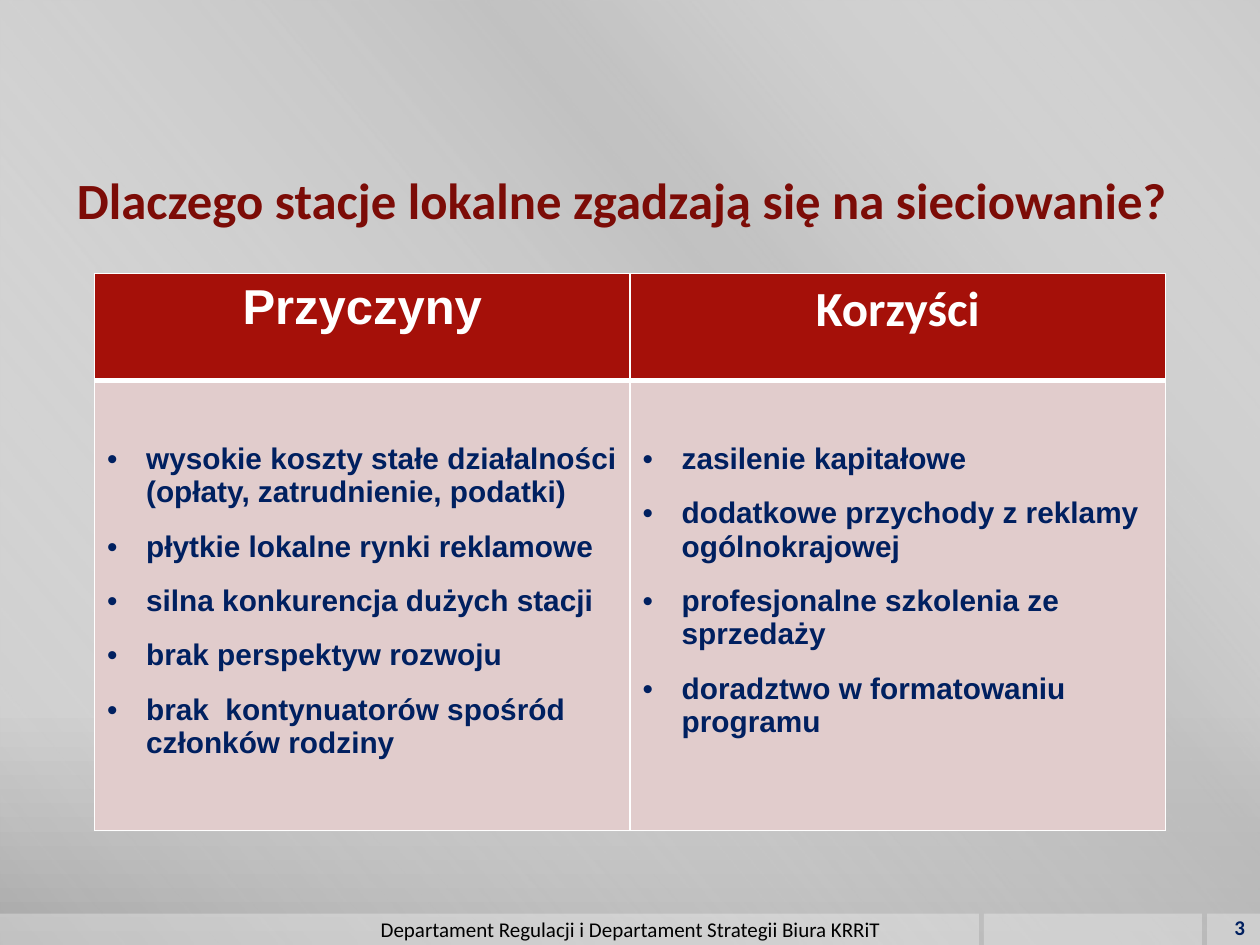
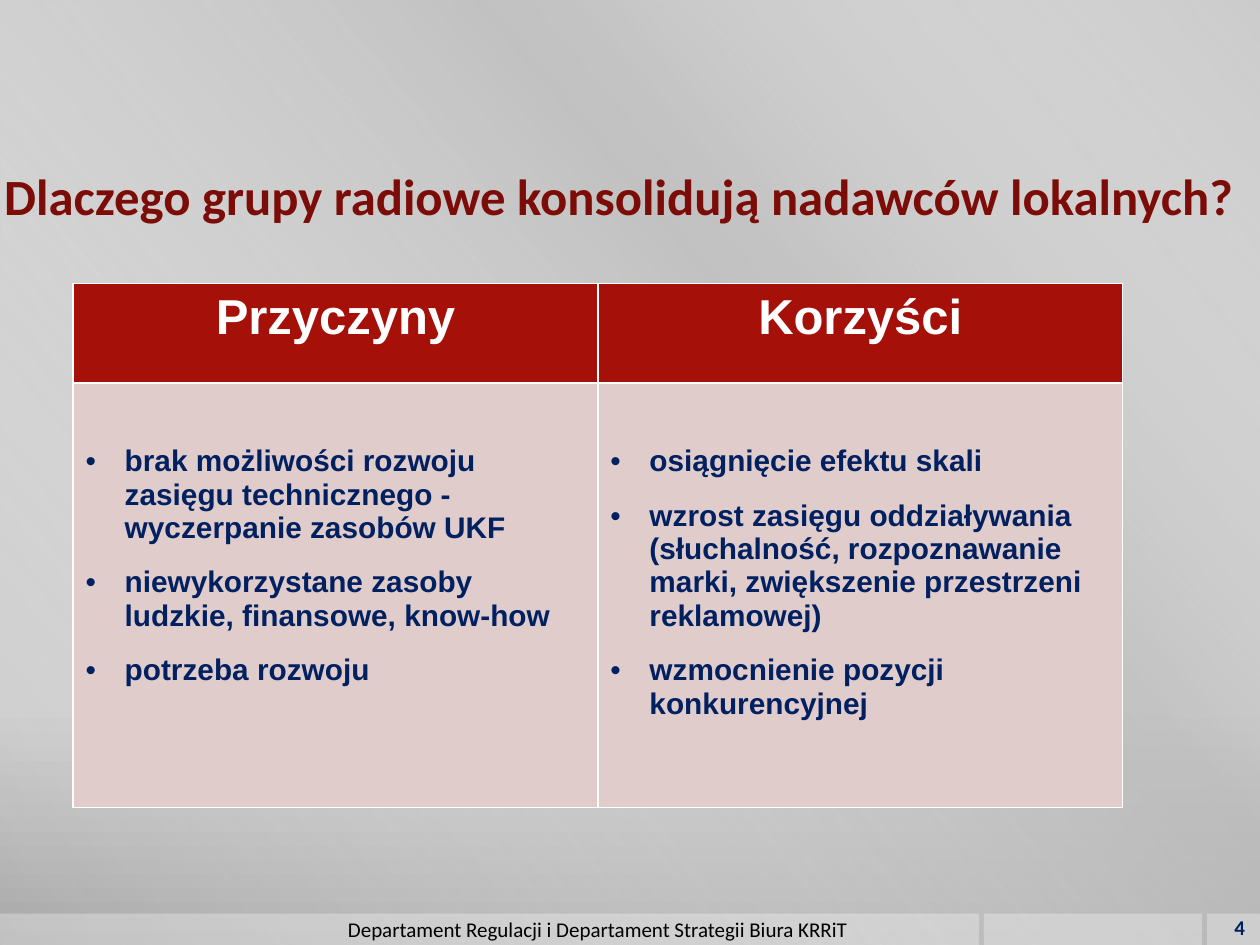
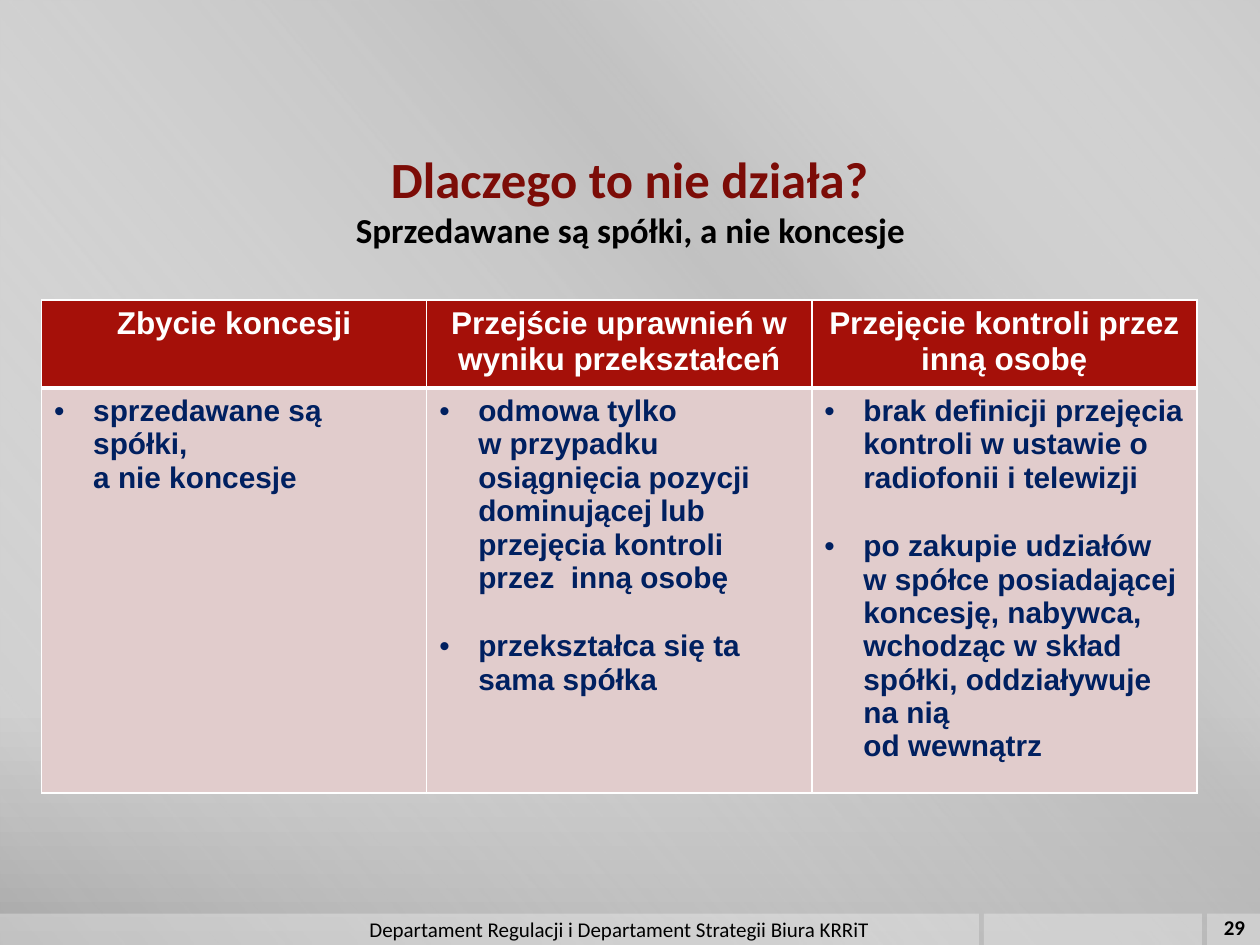
"""Build three slides on why local radio stations join networks."""
from lxml.etree import SubElement
from pptx import Presentation
from pptx.dml.color import RGBColor
from pptx.enum.shapes import MSO_SHAPE
from pptx.enum.text import MSO_ANCHOR, PP_ALIGN
from pptx.oxml.ns import qn
from pptx.util import Inches, Pt

WHITE = RGBColor(0xFF, 0xFF, 0xFF)
BLACK = RGBColor(0x00, 0x00, 0x00)
NAVY = RGBColor(0x00, 0x20, 0x60)
DARK_RED = RGBColor(0x7C, 0x0C, 0x07)
HEADER_RED = RGBColor(0xA5, 0x10, 0x09)
PALE_RED = RGBColor(0xE1, 0xCC, 0xCC)
LIGHT_GREY = RGBColor(0xCB, 0xCB, 0xCB)
MID_GREY = RGBColor(0xC8, 0xC8, 0xC8)
DARK_GREY = RGBColor(0xA7, 0xA7, 0xA7)
SHEEN_GREY = RGBColor(0xBF, 0xBF, 0xBF)

FOOTER = "Departament Regulacji i Departament Strategii Biura KRRiT"
FOOTER_BANDS = [(9.58, 0.42), (7.81, 1.73), (0, 7.77)]
BACKDROP = [(0, LIGHT_GREY, 100), (76, MID_GREY, 100), (100, DARK_GREY, 100)]
SHEEN = [(0, WHITE, 0), (34, SHEEN_GREY, 61), (38, SHEEN_GREY, 76), (100, WHITE, 0)]

SLIDES = [
    {
        "title": "Dlaczego stacje lokalne zgadzają się na sieciowanie?",
        "title_box": (0.44, 1.08, 9, 1),
        "number": "3", "number_color": NAVY, "footer_left": 1.38,
        "table_box": (0.75, 2.17, 8.5), "rows": (0.85, 3.57),
        "header_size": 28, "header_rule": 3, "body_top": 0.49, "gap": 12,
        "columns": [
            ("Przyczyny", "Arial", [
                "wysokie koszty stałe działalności (opłaty, zatrudnienie, podatki)",
                "płytkie lokalne rynki reklamowe",
                "silna konkurencja dużych stacji",
                "brak perspektyw rozwoju",
                "brak  kontynuatorów spośród członków rodziny"]),
            ("Korzyści", "Calibri", [
                "zasilenie kapitałowe",
                "dodatkowe przychody z reklamy ogólnokrajowej",
                "profesjonalne szkolenia ze sprzedaży",
                "doradztwo w formatowaniu programu"]),
        ],
    },
    {
        "title": "Dlaczego grupy radiowe konsolidują nadawców lokalnych?",
        "title_box": (0, 1.05, 9.83, 1),
        "number": "4", "number_color": NAVY, "footer_left": 1.12,
        "table_box": (0.58, 2.25, 8.33), "rows": (0.79, 3.37),
        "header_size": 28, "header_rule": 1, "body_top": 0.49, "gap": 12,
        "columns": [
            ("Przyczyny", "Arial", [
                "brak możliwości rozwoju zasięgu technicznego - wyczerpanie zasobów UKF",
                "niewykorzystane zasoby ludzkie, finansowe, know-how",
                "potrzeba rozwoju"]),
            ("Korzyści", "Arial", [
                "osiągnięcie efektu skali",
                "wzrost zasięgu oddziaływania (słuchalność, rozpoznawanie marki, "
                "zwiększenie przestrzeni reklamowej)",
                "wzmocnienie pozycji konkurencyjnej"]),
        ],
    },
    {
        "title": "Dlaczego to nie działa?",
        "title_box": (0.5, 0.75, 9, 1.33),
        "subtitle": "Sprzedawane są spółki, a nie koncesje",
        "number": "29", "number_color": BLACK, "footer_left": 1.29,
        "table_box": (0.33, 2.38, 9.17), "rows": (0.67, 3.18),
        "header_size": 18, "header_rule": 3, "body_top": 0.05, "gap": 20,
        "columns": [
            ("Zbycie koncesji", "Arial", [
                "sprzedawane są spółki,\na nie koncesje"]),
            ("Przejście uprawnień w wyniku przekształceń", "Arial", [
                "odmowa tylko\nw przypadku osiągnięcia pozycji dominującej "
                "lub przejęcia kontroli przez  inną osobę",
                "przekształca się ta sama spółka"]),
            ("Przejęcie kontroli przez inną osobę", "Arial", [
                "brak definicji przejęcia kontroli w ustawie o radiofonii i telewizji",
                "po zakupie udziałów\nw spółce posiadającej koncesję, nabywca, "
                "wchodząc w skład spółki, oddziaływuje na nią\nod wewnątrz"]),
        ],
    },
]


def paint_gradient(owner, fill, stops, angle):
    """Give the owner's fill these (position, colour, opacity) stops."""
    fill.gradient()
    gradient = owner.element.find(".//" + qn("a:gradFill"))
    gradient.clear()
    stop_list = SubElement(gradient, qn("a:gsLst"))
    for position, color, opacity in stops:
        stop = SubElement(stop_list, qn("a:gs"), pos=str(position * 1000))
        tint = SubElement(stop, qn("a:srgbClr"), val=str(color))
        SubElement(tint, qn("a:alpha"), val=str(opacity * 1000))
    SubElement(gradient, qn("a:lin"), ang=str(angle * 60000), scaled="0")


def add_label(slide, text, box, size, color, bold=True, align=PP_ALIGN.CENTER, inset=0.1):
    """Add one vertically centred line of Calibri text."""
    frame = slide.shapes.add_textbox(*map(Inches, box)).text_frame
    frame.word_wrap = True
    frame.vertical_anchor = MSO_ANCHOR.MIDDLE
    frame.margin_left = frame.margin_right = Inches(inset)
    frame.text = text
    line = frame.paragraphs[0]
    line.alignment = align
    font = line.runs[0].font
    font.name, font.size, font.bold = "Calibri", Pt(size), bold
    font.color.rgb = color


prs = Presentation()
prs.slide_width, prs.slide_height = Inches(10), Inches(7.5)
paint_gradient(prs.slide_master, prs.slide_master.background.fill, BACKDROP, 90)

for content in SLIDES:
    slide = prs.slides.add_slide(prs.slide_layouts[6])

    sheen = slide.shapes.add_shape(
        MSO_SHAPE.RECTANGLE, 0, 0, prs.slide_width, prs.slide_height)
    sheen.shadow.inherit = False
    sheen.line.fill.background()
    paint_gradient(sheen, sheen.fill, SHEEN, 140)

    for left, width in FOOTER_BANDS:
        band = slide.shapes.add_shape(
            MSO_SHAPE.RECTANGLE, Inches(left), Inches(7.25), Inches(width), Inches(0.25))
        band.shadow.inherit = False
        band.line.fill.background()
        band.fill.solid()
        band.fill.fore_color.rgb = WHITE
        tint = band.element.spPr.find(qn("a:solidFill"))[0]
        SubElement(tint, qn("a:alpha"), val="30000")

    add_label(slide, content["title"], content["title_box"], 29, DARK_RED, inset=0)
    add_label(slide, content["number"], (9.56, 7.23, 0.42, 0.25), 12,
              content["number_color"], align=PP_ALIGN.RIGHT)
    add_label(slide, FOOTER, (content["footer_left"], 7.25, 7.25, 0.25), 12, BLACK, bold=False)
    if "subtitle" in content:
        add_label(slide, content["subtitle"], (1.77, 1.59, 6.47, 0.47), 20, BLACK)

    left, top, width = content["table_box"]
    columns = content["columns"]
    table = slide.shapes.add_table(
        2, len(columns), Inches(left), Inches(top), Inches(width),
        Inches(sum(content["rows"]))).table
    table.first_row = table.horz_banding = False
    for row, height in zip(table.rows, content["rows"]):
        row.height = Inches(height)

    for index, (heading, heading_font, points) in enumerate(columns):
        header, body = table.cell(0, index), table.cell(1, index)
        for cell, color, ruled_side in ((header, HEADER_RED, "B"), (body, PALE_RED, "T")):
            for side in "LRTB":
                weight = content["header_rule"] if side == ruled_side else 1
                border = SubElement(cell._tc.get_or_add_tcPr(), qn("a:ln" + side),
                                    w=str(Pt(weight)))
                SubElement(SubElement(border, qn("a:solidFill")), qn("a:srgbClr"),
                           val=str(WHITE))
            cell.fill.solid()
            cell.fill.fore_color.rgb = color

        header.text_frame.text = heading
        header_line = header.text_frame.paragraphs[0]
        header_line.alignment = PP_ALIGN.CENTER
        font = header_line.runs[0].font
        font.name, font.size, font.bold = heading_font, Pt(content["header_size"]), True
        font.color.rgb = WHITE

        body.margin_top = Inches(content["body_top"])
        for order, point in enumerate(points):
            frame = body.text_frame
            item = frame.add_paragraph() if order else frame.paragraphs[0]
            item.text = point
            item.alignment = PP_ALIGN.LEFT
            if order:
                item.space_before = Pt(content["gap"])
            properties = item._p.get_or_add_pPr()
            properties.set("marL", str(Inches(0.31)))
            properties.set("indent", str(Inches(-0.31)))
            SubElement(properties, qn("a:buFont"), typeface="Arial")
            SubElement(properties, qn("a:buChar"), char="•")
            for run in item.runs:
                run.font.name, run.font.size, run.font.bold = "Arial", Pt(17), True
                run.font.color.rgb = NAVY

    for column in table.columns:
        column.width = Inches(width / len(columns))

prs.save("out.pptx")
